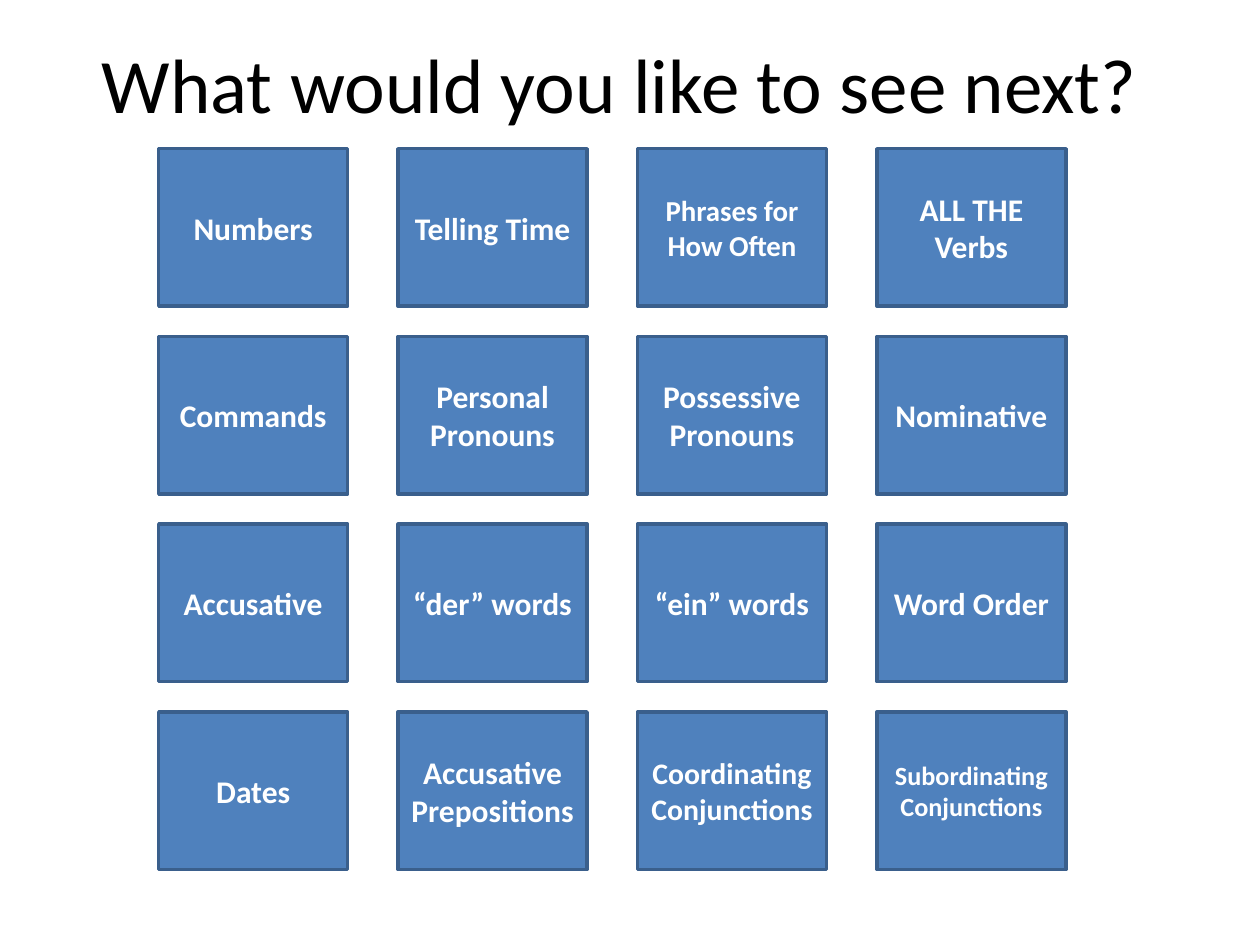
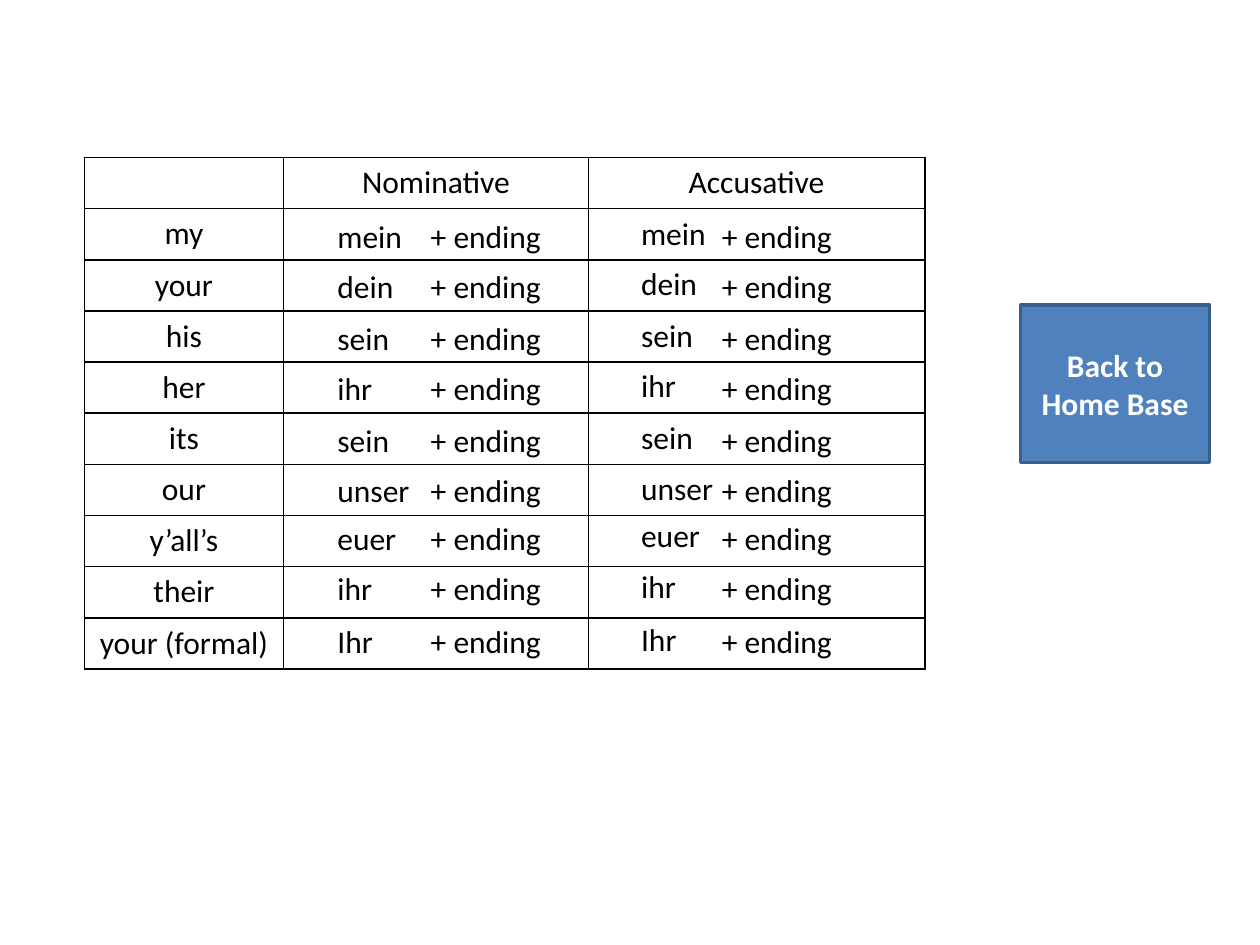
from lxml.etree import SubElement
from pptx import Presentation
from pptx.dml.color import RGBColor
from pptx.enum.shapes import MSO_SHAPE
from pptx.enum.text import MSO_ANCHOR, MSO_AUTO_SIZE, PP_ALIGN
from pptx.oxml.ns import qn
from pptx.util import Inches, Pt

BLACK = RGBColor(0x00, 0x00, 0x00)
WHITE = RGBColor(0xFF, 0xFF, 0xFF)
BUTTON_BLUE = RGBColor(0x4F, 0x81, 0xBD)
BUTTON_EDGE = RGBColor(0x3A, 0x5F, 0x8C)
FONT = "Calibri"

TITLE_ONLY, BLANK = 5, 6

# Topic menu: label and text size, row by row
TOPICS = [
    [("Numbers", 18), ("Telling Time", 18),
     ("Phrases for How Often", 16.5), ("ALL THE Verbs", 18)],
    [("Commands", 18), ("Personal Pronouns", 18),
     ("Possessive Pronouns", 18), ("Nominative", 18)],
    [("Accusative", 18), ("“der” words", 18),
     ("“ein” words", 18), ("Word Order", 18)],
    [("Dates", 18), ("Accusative Prepositions", 18),
     ("Coordinating Conjunctions", 17), ("Subordinating Conjunctions", 15)],
]
MENU_LEFT, MENU_TOP = 1.26, 1.18
MENU_STEP_X, MENU_STEP_Y = 1.9, 1.49

# Possessive pronouns: English, German stem, top of the German text
PRONOUNS = [
    ("my", "mein", 1.67),
    ("your", "dein", 2.07),
    ("his", "sein", 2.48),
    ("her", "ihr", 2.88),
    ("its", "sein", 3.29),
    ("our", "unser", 3.69),
    ("y’all’s", "euer", 4.07),
    ("their", "ihr", 4.47),
    ("your (formal)", "Ihr", 4.89),
]
CASES = ["Nominative", "Accusative"]
COLUMN_WIDTHS = [1.58, 2.42, 2.67]
ROW_HEIGHT = 0.406
# Per case: left of stem, left of ending, upward shift of stem
CASE_PLACES = [(2.58, 3.32, 0), (4.99, 5.63, 0.02)]


def write(frame, text, size=18, color=BLACK, bold=False, align=PP_ALIGN.LEFT):
    """Put formatted text into a text frame."""
    paragraph = frame.paragraphs[0]
    paragraph.alignment = align
    run = paragraph.add_run()
    run.text = text
    run.font.name = FONT
    run.font.size = Pt(size)
    run.font.bold = bold
    run.font.color.rgb = color


def add_title(slide, text):
    title = slide.shapes.title
    title.left, title.top = Inches(0.42), Inches(0.03)
    title.width, title.height = Inches(9), Inches(1.25)
    title.text_frame.vertical_anchor = MSO_ANCHOR.MIDDLE
    write(title.text_frame, text, size=44, align=PP_ALIGN.CENTER)


def add_button(slide, left, top, label, size=18):
    button = slide.shapes.add_shape(
        MSO_SHAPE.ACTION_BUTTON_CUSTOM,
        Inches(left), Inches(top), Inches(1.5), Inches(1.25))
    button.shadow.inherit = False
    button.fill.solid()
    button.fill.fore_color.rgb = BUTTON_BLUE
    button.line.color.rgb = BUTTON_EDGE
    button.line.width = Pt(2)
    button.text_frame.word_wrap = True
    button.text_frame.vertical_anchor = MSO_ANCHOR.MIDDLE
    write(button.text_frame, label, size=size, color=WHITE, bold=True,
          align=PP_ALIGN.CENTER)


def add_word(slide, left, top, width, text):
    word = slide.shapes.add_textbox(
        Inches(left), Inches(top), Inches(width), Inches(0.4))
    word.text_frame.word_wrap = True
    word.text_frame.auto_size = MSO_AUTO_SIZE.SHAPE_TO_FIT_TEXT
    write(word.text_frame, text)


def outline_cell(cell):
    """Clear the cell's fill and draw a thin black border on each side."""
    cell.fill.background()
    properties = cell._tc.get_or_add_tcPr()
    for position, side in enumerate(("a:lnL", "a:lnR", "a:lnT", "a:lnB")):
        border = SubElement(properties, qn(side), w=str(Pt(1)))
        fill = SubElement(border, qn("a:solidFill"))
        SubElement(fill, qn("a:srgbClr"), val=str(BLACK))
        properties.insert(position, border)


def add_grid(slide, left, top, rows):
    grid = slide.shapes.add_table(
        len(rows), len(COLUMN_WIDTHS), Inches(left), Inches(top),
        Inches(sum(COLUMN_WIDTHS)), Inches(ROW_HEIGHT * len(rows))).table
    grid.first_row = grid.horz_banding = False
    for column, width in zip(grid.columns, COLUMN_WIDTHS):
        column.width = Inches(width)
    for row, labels in zip(grid.rows, rows):
        row.height = Inches(ROW_HEIGHT)
        for cell, label in zip(row.cells, labels):
            outline_cell(cell)
            if label:
                write(cell.text_frame, label, align=PP_ALIGN.CENTER)


def build_menu(prs):
    slide = prs.slides.add_slide(prs.slide_layouts[TITLE_ONLY])
    add_title(slide, "What would you like to see next?")
    for row, topics in enumerate(TOPICS):
        for column, (topic, size) in enumerate(topics):
            add_button(slide, MENU_LEFT + column * MENU_STEP_X,
                       MENU_TOP + row * MENU_STEP_Y, topic, size)


def build_pronouns(prs):
    slide = prs.slides.add_slide(prs.slide_layouts[BLANK])
    add_button(slide, 8.1, 2.42, "Back to Home Base")

    # Table of English pronouns with room for the German forms
    rows = [["", *CASES]] + [[english, "", ""] for english, _, _ in PRONOUNS]
    add_grid(slide, 0.67, 1.25, rows)

    # German stems and endings over the table
    for stem_left, ending_left, shift in CASE_PLACES:
        for _, stem, top in PRONOUNS:
            add_word(slide, stem_left, top - shift, 0.83, stem)
            add_word(slide, ending_left, top, 1.15, "+ ending")


def main():
    prs = Presentation()
    prs.slide_width, prs.slide_height = Inches(10), Inches(7.5)
    build_menu(prs)
    build_pronouns(prs)
    prs.save("out.pptx")


if __name__ == "__main__":
    main()
